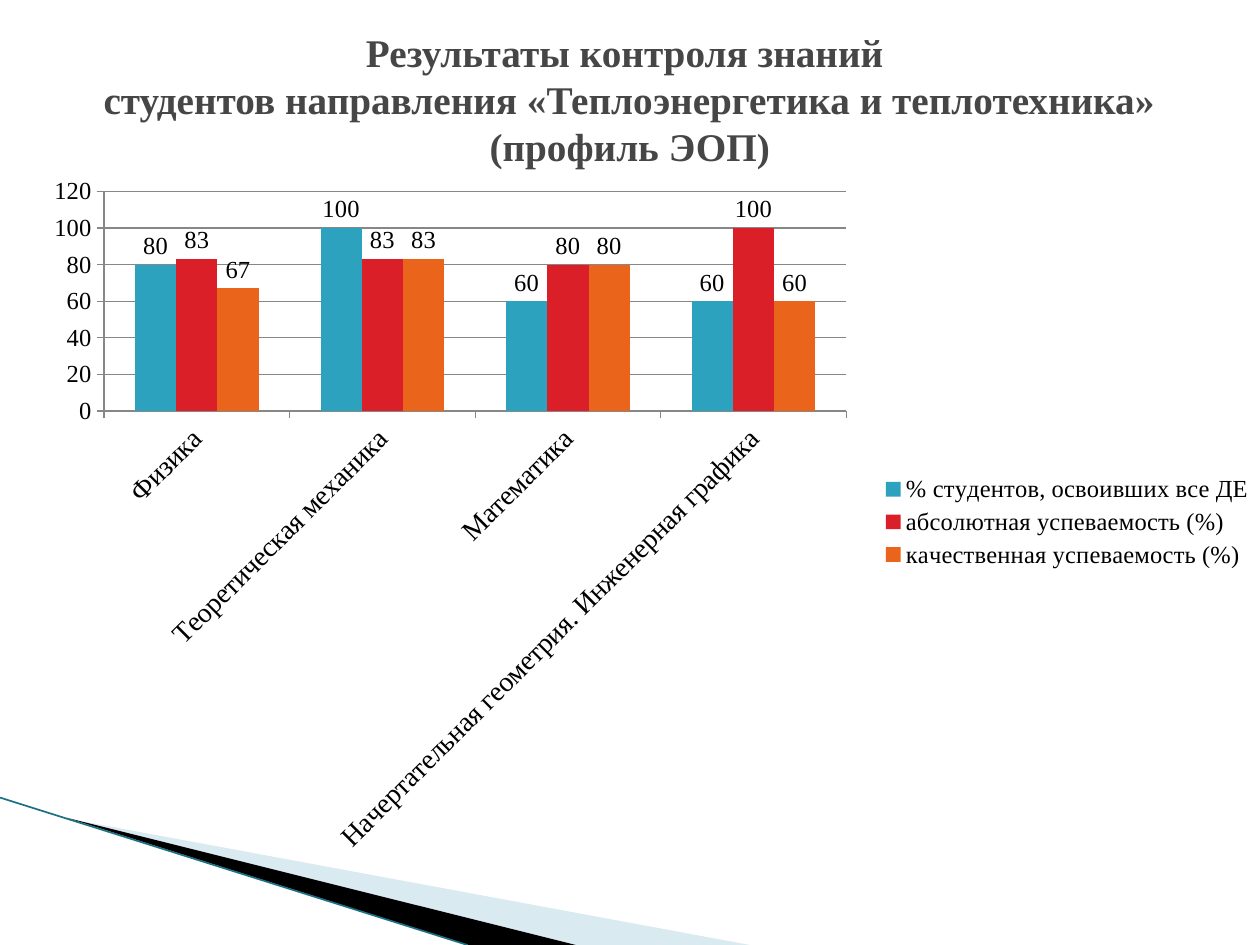
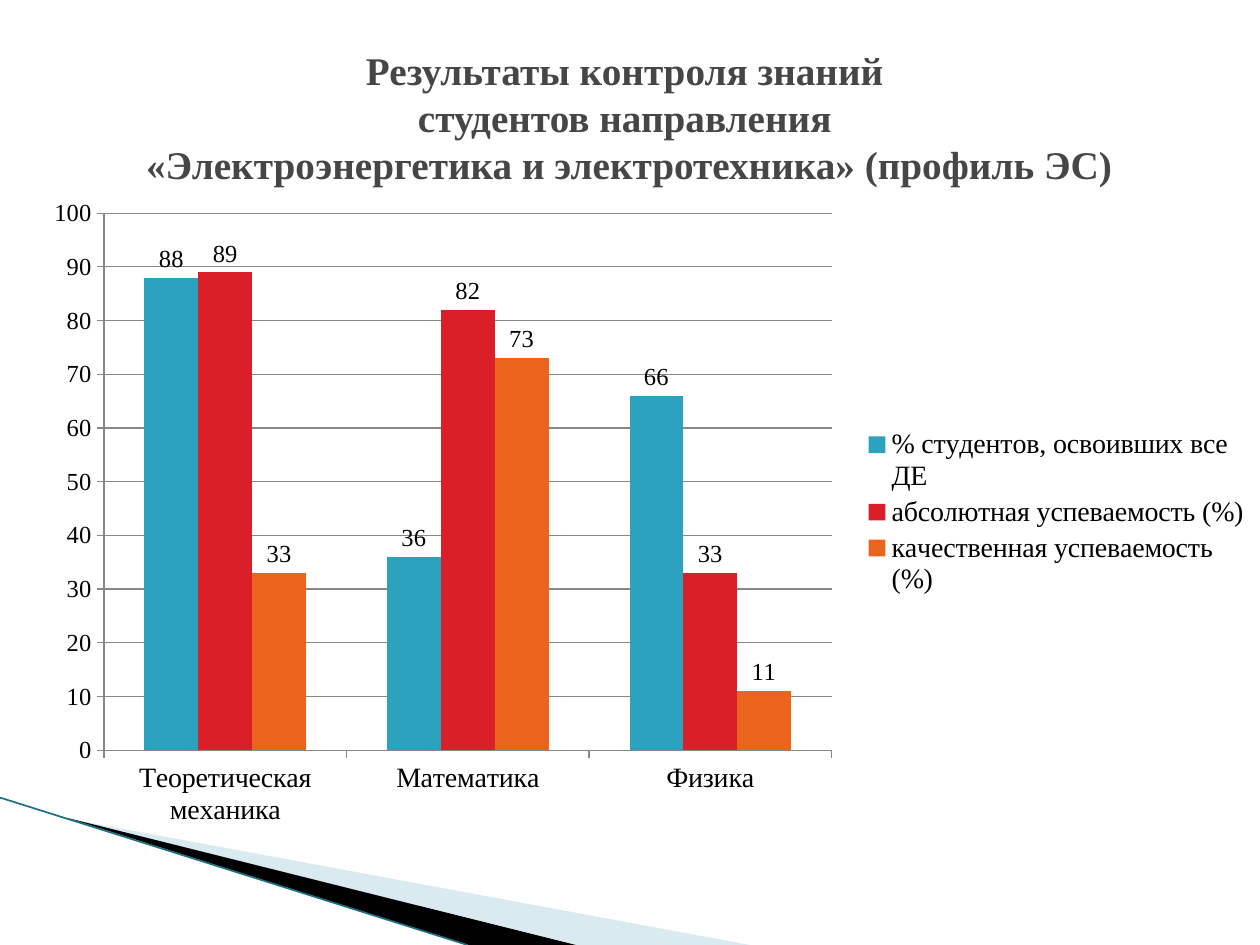
from dataclasses import dataclass
from lxml import etree
from pptx import Presentation
from pptx.chart.data import CategoryChartData
from pptx.dml.color import RGBColor
from pptx.enum.chart import XL_CHART_TYPE, XL_LABEL_POSITION, XL_LEGEND_POSITION, XL_TICK_MARK
from pptx.enum.shapes import MSO_CONNECTOR
from pptx.enum.text import MSO_ANCHOR, PP_ALIGN
from pptx.oxml.ns import qn
from pptx.util import Inches, Pt


@dataclass(frozen=True)
class Theme:
    font: str = "Times New Roman"
    title: str = "464646"
    text: str = "000000"
    grid: str = "878787"
    pale: str = "A0CBDC"
    dark: str = "000000"
    edge: str = "1B7083"
    series: tuple = ("2DA2BF", "DA1F28", "EB641B")
    title_size: float = 22.4
    category_size: int = 16
    value_size: int = 14


SERIES = ("% студентов, освоивших все ДЕ", "абсолютная успеваемость (%)", "качественная успеваемость (%)")
COLUMNS, ROWS = 100, 75


def rgb(value):
    return RGBColor.from_string(value)


class Deck:
    def __init__(self, theme):
        self.theme = theme
        self.prs = Presentation()
        self.prs.slide_width, self.prs.slide_height = Inches(10), Inches(7.5)
        self.s = None

    def at(self, column, row):
        return (int(self.prs.slide_width * column / COLUMNS),
                int(self.prs.slide_height * row / ROWS))

    def slide(self):
        self.s = self.prs.slides.add_slide(self.prs.slide_layouts[6])
        self.wedge([(5.5, 65), (59.5, 75), (45.6, 75)], self.theme.pale, 40)
        self.wedge([(5.3, 64.9), (45.7, 75), (37.2, 75)], self.theme.dark)
        self.line((0, 63.3), (37.1, 75), self.theme.edge, 0.95)

    def wedge(self, points, color, opacity=100):
        start, *rest = [self.at(*point) for point in points]
        builder = self.s.shapes.build_freeform(*start)
        builder.add_line_segments(rest, close=True)
        sp = builder.convert_to_shape()
        sp.shadow.inherit = False
        sp.line.fill.background()
        sp.fill.solid()
        sp.fill.fore_color.rgb = rgb(color)
        if opacity < 100:
            fill = sp.fill._xPr.find(qn("a:solidFill"))[0]
            etree.SubElement(fill, qn("a:alpha"), val=str(opacity * 1000))

    def line(self, start, end, color, width):
        cxn = self.s.shapes.add_connector(MSO_CONNECTOR.STRAIGHT, *self.at(*start), *self.at(*end))
        cxn.line.color.rgb = rgb(color)
        cxn.line.width = Pt(width)
        etree.SubElement(cxn._element.spPr, qn("a:effectLst"))

    def title(self, text, row):
        tf = self.s.shapes.add_textbox(*self.at(5, row), *self.at(90, 12.5)).text_frame
        tf.word_wrap = True
        tf.vertical_anchor = MSO_ANCHOR.MIDDLE
        p = tf.paragraphs[0]
        p.text = text.replace("\n", "\v")
        p.alignment = PP_ALIGN.CENTER
        self.style(p.font, self.theme.title_size, self.theme.title, True)

    def style(self, font, size, color=None, bold=False):
        font.name, font.size, font.bold = self.theme.font, Pt(size), bold
        font.color.rgb = rgb(color or self.theme.text)

    def layout(self, parent, index, box, inner=False):
        for old in parent.findall(qn("c:layout")):
            parent.remove(old)
        layout = etree.Element(qn("c:layout"))
        manual = etree.SubElement(layout, qn("c:manualLayout"))
        if inner:
            etree.SubElement(manual, qn("c:layoutTarget"), val="inner")
        for name in ("xMode", "yMode"):
            etree.SubElement(manual, qn("c:" + name), val="edge")
        for name, share in zip("xywh", box):
            etree.SubElement(manual, qn("c:" + name), val=str(share / 100))
        parent.insert(index, layout)

    def axis(self, axis, size):
        axis.major_tick_mark = XL_TICK_MARK.OUTSIDE
        axis.minor_tick_mark = XL_TICK_MARK.NONE
        axis.format.line.color.rgb = rgb(self.theme.grid)
        self.style(axis.tick_labels.font, size)

    def chart(self, row, height, results, top, step, plot, legend, legend_size, tilt=0):
        data = CategoryChartData()
        data.categories = list(results)
        for name, values in zip(SERIES, zip(*results.values())):
            data.add_series(name, values)
        chart = self.s.shapes.add_chart(XL_CHART_TYPE.COLUMN_CLUSTERED, *self.at(2.3, row),
                                        *self.at(97.7, height), data).chart
        chart.has_title = False
        self.style(chart.font, self.theme.value_size)

        value = chart.value_axis
        self.axis(value, self.theme.value_size)
        value.minimum_scale, value.maximum_scale, value.major_unit = 0, top, step
        value.has_major_gridlines = True
        value.major_gridlines.format.line.color.rgb = rgb(self.theme.grid)
        category = chart.category_axis
        self.axis(category, self.theme.category_size)
        if tilt:
            body = category._element.find(qn("c:txPr")).find(qn("a:bodyPr"))
            body.set("rot", str(tilt * 60000))
            body.set("vert", "horz")

        bars = chart.plots[0]
        bars.gap_width, bars.overlap, bars.vary_by_categories = 150, 0, False
        for series, color in zip(bars.series, self.theme.series):
            series.format.fill.solid()
            series.format.fill.fore_color.rgb = rgb(color)
            labels = series.data_labels
            labels.show_value = True
            labels.position = XL_LABEL_POSITION.OUTSIDE_END
            self.style(labels.font, self.theme.value_size)

        chart.has_legend = True
        chart.legend.position = XL_LEGEND_POSITION.RIGHT
        chart.legend.include_in_layout = False
        self.style(chart.legend.font, legend_size)
        self.layout(chart.legend._element, 1, legend)
        self.layout(chart._chartSpace.chart.plotArea, 0, plot, True)


def main():
    deck = Deck(Theme())

    deck.slide()
    deck.chart(14.1, 54.7,
               {"Физика": (80, 83, 67),
                "Теоретическая механика": (100, 83, 83),
                "Математика": (60, 80, 80),
                "Начертательная геометрия. Инженерная графика": (60, 100, 60)},
               120, 20, plot=(6.1, 1.9, 60.3, 31.9), legend=(68.7, 42.4, 31.3, 15),
               legend_size=14, tilt=-45)
    deck.title("Результаты контроля знаний \nстудентов направления "
               "«Теплоэнергетика и теплотехника» (профиль ЭОП)", 1.6)

    deck.slide()
    deck.chart(14.8, 51.8,
               {"Теоретическая механика": (88, 89, 33),
                "Математика": (36, 82, 73),
                "Физика": (66, 33, 11)},
               100, 10, plot=(6.1, 4.1, 59.1, 82.3), legend=(67.7, 36.5, 31.5, 26.8),
               legend_size=16)
    deck.title("Результаты контроля знаний \nстудентов направления \n"
               "«Электроэнергетика и электротехника» (профиль ЭС)", 3)

    deck.prs.save("out.pptx")


if __name__ == "__main__":
    main()
